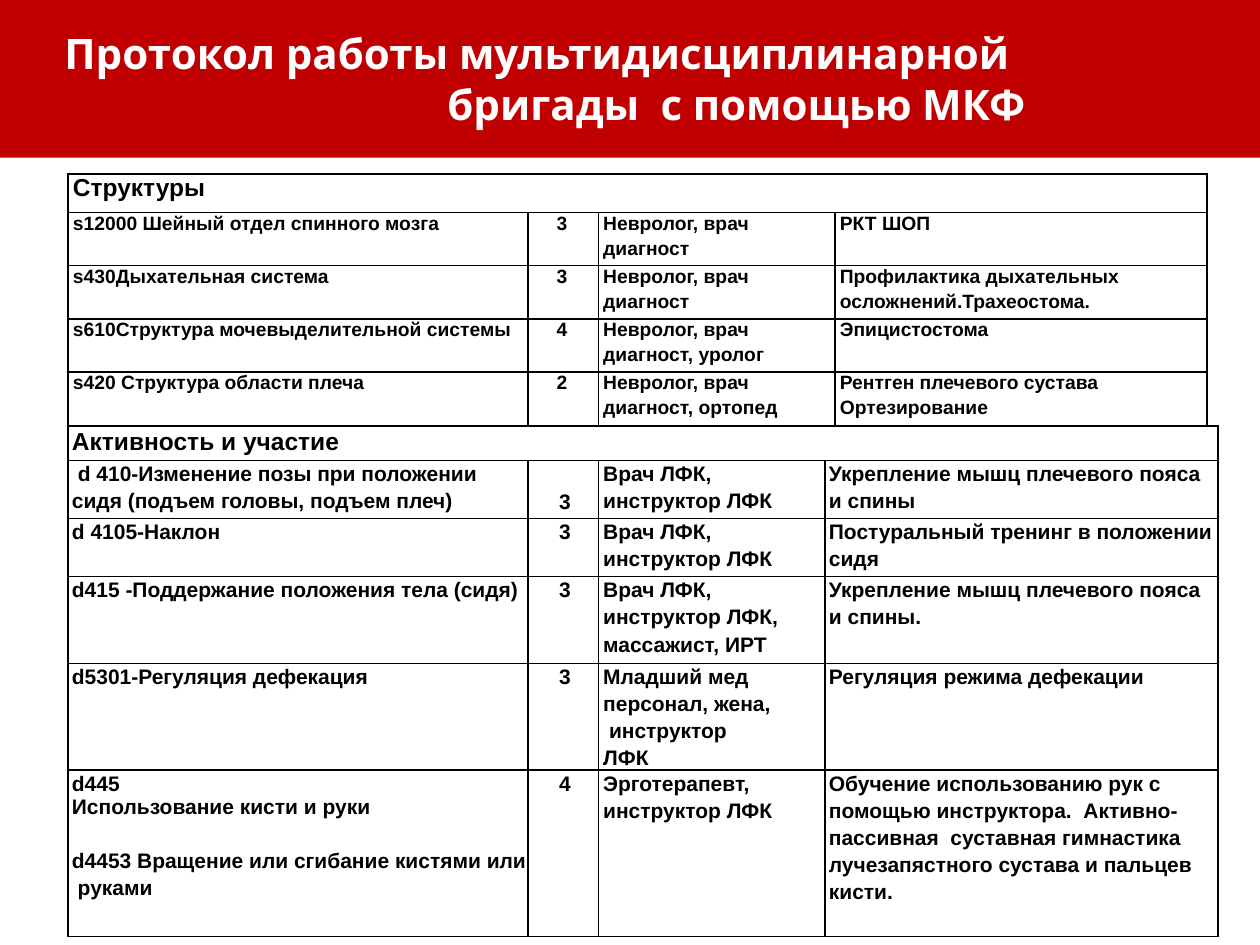
import pptx
import pptx.util
import pptx.dml.color
import pptx.enum.shapes
import pptx.oxml.ns
from lxml import etree

Cm = pptx.util.Cm
Pt = pptx.util.Pt
RED = pptx.dml.color.RGBColor(0xC0, 0x00, 0x00)
WHITE = pptx.dml.color.RGBColor(0xFF, 0xFF, 0xFF)
BLACK = pptx.dml.color.RGBColor(0x00, 0x00, 0x00)

TITLE = "Протокол работы мультидисциплинарной бригады  с помощью МКФ"
COLUMNS = [9.27, 1.42, 4.57, 0.2, 7.5, 0.22]
STRUCTURES = [
    (0.68, ["Структуры"]),
    (1.07, ["s12000 Шейный отдел спинного мозга", "3", "Невролог, врач\nдиагност", "РКТ ШОП"]),
    (1.07, ["s430Дыхательная система", "3", "Невролог, врач\nдиагност",
            "Профилактика дыхательных\nосложнений.Трахеостома."]),
    (1.07, ["s610Структура мочевыделительной системы", "4",
            "Невролог, врач\nдиагност, уролог", "Эпицистостома"]),
    (1.09, ["s420 Структура области плеча", "2", "Невролог, врач\nдиагност, ортопед",
            "Рентген плечевого сустава\nОртезирование"]),
]
ACTIVITIES = [
    (0.7, ["Активность и участие"]),
    (1.17, ["d 410-Изменение позы при положении\nсидя (подъем головы, подъем плеч)", "3",
            "Врач ЛФК,\nинструктор ЛФК", "Укрепление мышц плечевого пояса\nи спины"]),
    (1.17, ["d 4105-Наклон", "3", "Врач ЛФК,\nинструктор ЛФК",
            "Постуральный тренинг в положении\nсидя"]),
    (1.75, ["d415 -Поддержание положения тела (сидя)", "3",
            "Врач ЛФК,\nинструктор ЛФК,\nмассажист, ИРТ",
            "Укрепление мышц плечевого пояса\nи спины."]),
    (2.12, ["d5301-Регуляция дефекация", "3",
            "Младший мед\nперсонал, жена,  инструктор ЛФК", "Регуляция режима дефекации"]),
    (3.35, ["d445\nИспользование кисти и руки\nd4453 Вращение или сгибание кистями или  руками",
            "4", "Эрготерапевт,\nинструктор ЛФК",
            "Обучение использованию рук с\nпомощью инструктора.  Активно-\n"
            "пассивная  суставная гимнастика\nлучезапястного сустава и пальцев  кисти."]),
]
GROUPS = [
    dict(rows=STRUCTURES, spans=[(0, 0), (1, 1), (2, 3), (4, 4)], last=4,
         size=11, left=[0.1, 0.58, 0.1, 0.1], top=0.01),
    dict(rows=ACTIVITIES, spans=[(0, 0), (1, 1), (2, 2), (3, 5)], last=5,
         size=12, left=[0.08, 0.63, 0.1, 0.08], top=0.04),
]
SPACING = {
    "Использование кисти и руки": (0, 1),
    "d4453 Вращение или сгибание кистями или  руками": (15, 1.15),
    "персонал, жена,  инструктор ЛФК": (0, 1.15),
    "лучезапястного сустава и пальцев  кисти.": (0, 1.15),
}
LOWERED = "d 410-Изменение позы при положении"


def set_borders(cell, sides):
    properties = cell._tc.get_or_add_tcPr()
    for position, side in enumerate(("L", "R", "T", "B")):
        line = etree.Element(pptx.oxml.ns.qn("a:ln" + side), w=str(Pt(1)))
        if side in sides:
            fill = etree.SubElement(line, pptx.oxml.ns.qn("a:solidFill"))
            etree.SubElement(fill, pptx.oxml.ns.qn("a:srgbClr"), val=str(BLACK))
        else:
            etree.SubElement(line, pptx.oxml.ns.qn("a:noFill"))
        properties.insert(position, line)


def write_cell(cell, text, size, left, top):
    cell.margin_left, cell.margin_top = Cm(left), Cm(top)
    cell.text = text
    for number, paragraph in enumerate(cell.text_frame.paragraphs):
        font = paragraph.font
        font.name, font.size, font.bold = "Arial", Pt(size), True
        font.color.rgb = BLACK
        before, line = SPACING.get(paragraph.text, (2.1 if number else 0, 1))
        paragraph.space_before, paragraph.line_spacing = Pt(before), line
        if paragraph.text == LOWERED:
            paragraph._p.get_or_add_pPr().set("indent", str(Cm(0.12)))
        if paragraph.text.startswith("персонал"):
            cell.margin_right = Cm(1.04)


def add_protocol(page):
    heights = [height for group in GROUPS for height, texts in group["rows"]]
    table = page.shapes.add_table(len(heights), len(COLUMNS), Cm(1.37), Cm(3.51),
                                  Cm(sum(COLUMNS)), Cm(sum(heights))).table
    table.first_row = table.horz_banding = False
    for column, width in zip(table.columns, COLUMNS):
        column.width = Cm(width)
    for row, height in zip(table.rows, heights):
        row.height = Cm(height)
    for cell in table.iter_cells():
        cell.fill.background()
        cell.margin_left = cell.margin_right = cell.margin_top = cell.margin_bottom = 0

    row = 0
    for group in GROUPS:
        for height, texts in group["rows"]:
            heading = len(texts) == 1
            spans = [(0, group["last"])] if heading else group["spans"]
            for column in range(len(COLUMNS)):
                inside = column <= group["last"]
                set_borders(table.cell(row, column), "LRTB" if inside else "L")
            for text, (first, last), left in zip(texts, spans, group["left"]):
                cell = table.cell(row, first)
                if last > first:
                    cell.merge(table.cell(row, last))
                lowered = texts[0].startswith(LOWERED) and text == "3"
                write_cell(cell, text, 14 if heading else group["size"], left,
                           0.61 if lowered else group["top"])
            row += 1


def add_title(page, width):
    banner = page.shapes.add_shape(pptx.enum.shapes.MSO_SHAPE.RECTANGLE, 0, 0, width, Cm(3.18))
    banner.shadow.inherit = False
    banner.fill.solid()
    banner.fill.fore_color.rgb = RED
    banner.line.fill.background()

    box = page.shapes.add_textbox(Cm(1.27), Cm(0.53), Cm(22.83), Cm(2.11))
    frame = box.text_frame
    frame.word_wrap = True
    frame.margin_left = frame.margin_right = frame.margin_bottom = 0
    frame.margin_top = Cm(0.03)
    para = frame.paragraphs[0]
    para.text = TITLE
    para.space_before = Pt(1)
    para.font.name, para.font.size, para.font.bold = "Karla", Pt(24), True
    para.font.color.rgb = WHITE
    properties = para._p.get_or_add_pPr()
    properties.set("marL", str(Cm(7.75)))
    properties.set("indent", str(Cm(-7.72)))


def main():
    deck = pptx.Presentation()
    deck.slide_width, deck.slide_height = Cm(25.4), Cm(19.05)
    page = deck.slides.add_slide(deck.slide_layouts[6])
    add_protocol(page)
    add_title(page, deck.slide_width)
    deck.save("out.pptx")


if __name__ == "__main__":
    main()
